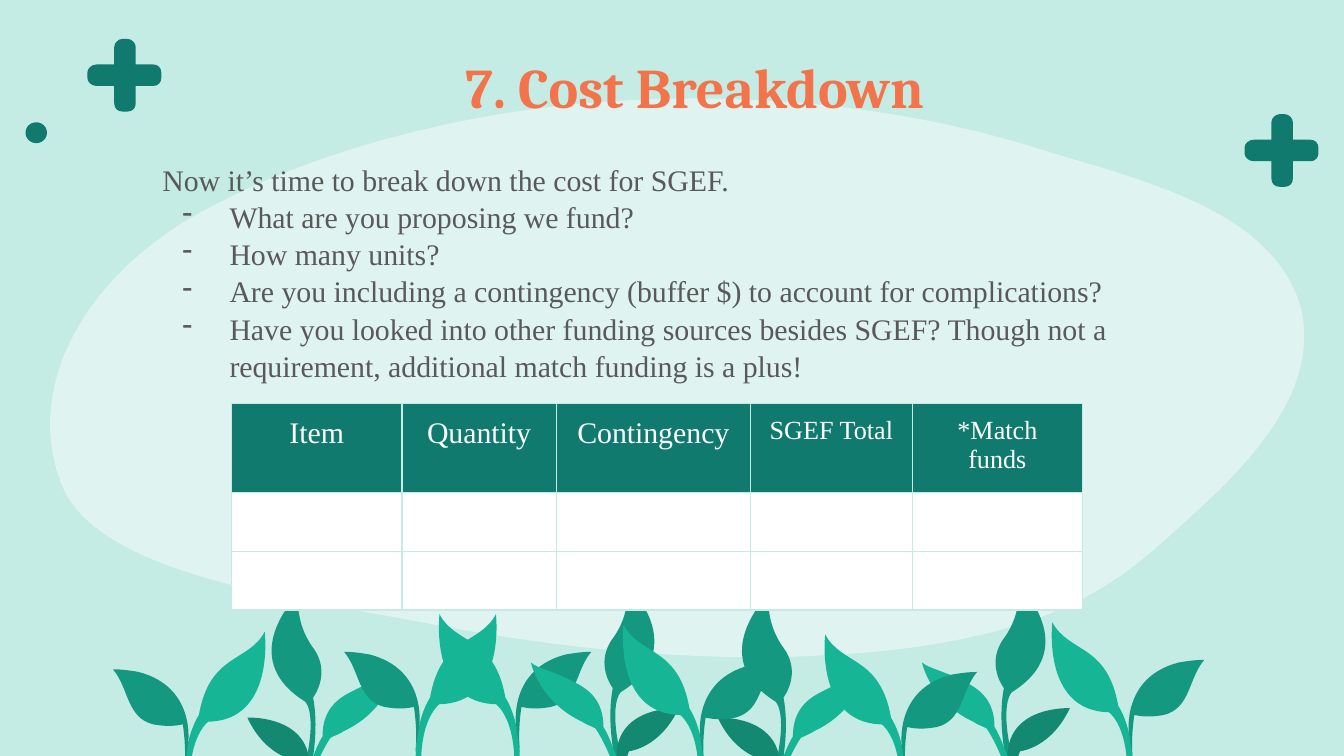
from pptx import Presentation
from pptx.util import Pt
from pptx.dml.color import RGBColor
from pptx.enum.shapes import MSO_SHAPE
from pptx.enum.text import PP_ALIGN
from pptx.oxml.ns import qn
from lxml import etree

OVAL = MSO_SHAPE.OVAL
LEFT, CENTER = PP_ALIGN.LEFT, PP_ALIGN.CENTER

HEX = {
    "mint": "C4ECE4", "teal": "107A6F", "white": "FFFFFF", "coral": "F3734A",
    "gray": "595959", "leaf": "149980", "light": "16B596", "dark": "138972",
}
SERIF = "Times New Roman"
TITLE = "7. Cost Breakdown"
INTRO = "Now it’s time to break down the cost for SGEF."
ASKS = [
    "What are you proposing we fund?",
    "How many units?",
    "Are you including a contingency (buffer $) to account for complications?",
    "Have you looked into other funding sources besides SGEF? "
    "Though not a requirement, additional match funding is a plus!",
]
HEADS = [("Item", 16, 91.4), ("Quantity", 16, 82.6), ("Contingency", 16, 104.2),
         ("SGEF Total", 14, 86.6), ("*Match funds", 14, 91.2)]
ROWS = [45.5, 31.4, 31.4]

GRID = 0.72
CROSS = [
    (95, 83), (98, 83, 101, 81, 101, 77), (101, 64), (114, 64),
    (118, 64, 120, 61, 120, 58), (120, 54), (120, 51, 118, 48, 114, 48),
    (101, 48), (101, 35), (101, 32, 98, 29, 95, 29), (91, 29),
    (88, 29, 85, 32, 85, 35), (85, 48), (72, 48), (68, 48, 65, 51, 65, 54),
    (65, 58), (65, 61, 68, 64, 72, 64), (85, 64), (85, 77),
    (85, 81, 88, 83, 91, 83),
]
BLOB = [
    (727, 473), (764, 465, 798, 452, 827, 433), (850, 418, 870, 399, 892, 379),
    (941, 334, 981, 284, 968, 229), (946, 154, 847, 134, 764, 108),
    (635, 69, 469, 60, 317, 96), (261, 109, 206, 128, 157, 154),
    (65, 201, 15, 288, 47, 363), (77, 432, 241, 448, 324, 465),
    (404, 480, 490, 490, 576, 489), (622, 488, 676, 485, 727, 473),
]
TALL = [
    ("leaf", [(222, 442), (222, 442, 174, 489, 227, 522),
              (227, 522, 237, 530, 226, 574), (231, 574),
              (231, 574, 238, 545, 233, 519), (233, 519, 247, 501, 233, 482),
              (219, 463, 222, 442, 222, 442)]),
    ("light", [(263, 514), (250, 520, 240, 529, 240, 548),
               (234, 557, 226, 583, 226, 583), (227, 594),
               (235, 564, 246, 549, 246, 549), (250, 547, 253, 546, 256, 544),
               (288, 529, 294, 500, 294, 500), (293, 501, 291, 502, 289, 503),
               (282, 506, 272, 509, 263, 514)]),
    ("dark", [(184, 534), (198, 564, 221, 566, 221, 566),
              (232, 593, 213, 629, 213, 629), (215, 632),
              (231, 601, 230, 565, 230, 565), (226, 532, 184, 534, 184, 534)]),
]
PAIR = [
    ("light", [(197, 470), (185, 493, 156, 486, 148, 532),
               (130, 561, 140, 611, 140, 611), (144, 611),
               (134, 551, 155, 537, 155, 537), (205, 536, 197, 470, 197, 470)]),
    ("leaf", [(103, 500), (97, 499, 91, 498, 84, 498),
              (96, 512, 94, 534, 114, 539), (120, 540, 127, 541, 136, 539),
              (136, 539, 139, 557, 137, 573), (140, 553),
              (140, 553, 146, 511, 103, 500)]),
]
PLANTS = [
    (TALL, 1, 0, 0), (PAIR, 1, 0, 0), (TALL, -1, 980, -7), (PAIR, -1, 980, -7),
    (PAIR, 1, 172, -13), (PAIR, -1, 524, -13), (PAIR, -1, 811, 2),
    (TALL, -1, 689, -7), (TALL, 1, 350, 0), (PAIR, -1, 661, -5),
]


def color(name):
    return RGBColor.from_string(HEX[name])


def paint(shape, name):
    shape.shadow.inherit = False
    shape.fill.solid()
    shape.fill.fore_color.rgb = color(name)
    shape.line.fill.background()


def bend(shape, segs):
    lines = iter(shape._element.findall(".//" + qn("a:lnTo")))
    for seg in segs:
        group = [next(lines) for _ in range(len(seg) // 2)]
        if len(group) == 3:
            curve = etree.Element(qn("a:cubicBezTo"))
            group[0].addprevious(curve)
            for line in group:
                curve.append(line[0])
                line.getparent().remove(line)


def draw(segs, name, flip=1, dx=0, dy=0):
    dots = [(Pt((flip * seg[i] + dx) * GRID), Pt((seg[i + 1] + dy) * GRID))
            for seg in segs for i in range(0, len(seg), 2)]
    pen = slide.shapes.build_freeform(*dots[0], scale=1.0)
    pen.add_line_segments(dots[1:], close=True)
    shape = pen.convert_to_shape()
    bend(shape, segs[1:])
    paint(shape, name)
    return shape


def write(para, text, size, name, font=SERIF, bold=False, align=LEFT):
    para.alignment = align
    run = para.add_run()
    run.text = text
    run.font.size, run.font.name, run.font.bold = Pt(size), font, bold
    run.font.color.rgb = color(name)


def inset(area):
    area.margin_left = area.margin_right = Pt(7.2)
    area.margin_top = area.margin_bottom = Pt(7.2)


def add_box(x, y, w, h):
    frame = slide.shapes.add_textbox(Pt(x), Pt(y), Pt(w), Pt(h)).text_frame
    frame.word_wrap = True
    inset(frame)
    return frame


def dash(para):
    props = para._p.get_or_add_pPr()
    props.set("marL", str(Pt(36)))
    props.set("indent", str(-Pt(25.2)))
    tint = etree.SubElement(props, qn("a:buClr"))
    etree.SubElement(tint, qn("a:srgbClr"), val=HEX["gray"])
    etree.SubElement(props, qn("a:buChar"), char="-")


def edge(cell):
    props = cell._tc.get_or_add_tcPr()
    for side in ("lnL", "lnR", "lnT", "lnB"):
        line = etree.SubElement(props, qn("a:" + side), w=str(Pt(0.75)))
        fill = etree.SubElement(line, qn("a:solidFill"))
        etree.SubElement(fill, qn("a:srgbClr"), val=HEX["mint"])


deck = Presentation()
deck.slide_width, deck.slide_height = Pt(720), Pt(405)
slide = deck.slides.add_slide(deck.slide_layouts[6])
slide.background.fill.solid()
slide.background.fill.fore_color.rgb = color("mint")

draw(CROSS, "teal")
draw(CROSS, "teal", dx=861, dy=56)
dot = slide.shapes.add_shape(OVAL, Pt(13.7), Pt(65.5), Pt(11.5), Pt(11.2))
paint(dot, "teal")
blob = draw(BLOB, "white")
tint = blob._element.spPr.find(qn("a:solidFill"))[0]
etree.SubElement(tint, qn("a:alpha"), val="46000")

for plant, flip, dx, dy in PLANTS:
    for name, segs in plant:
        draw(segs, name, flip, dx, dy)

head = add_box(68.4, 20.9, 607.7, 37.4)
write(head.paragraphs[0], TITLE, 30, "coral", "Cambria", True, CENTER)

wide = sum(w for _, _, w in HEADS)
table = slide.shapes.add_table(
    len(ROWS), len(HEADS), Pt(124), Pt(216), Pt(wide), Pt(sum(ROWS))).table
for r, high in enumerate(ROWS):
    table.rows[r].height = Pt(high)
    for c, (text, size, w) in enumerate(HEADS):
        table.columns[c].width = Pt(w)
        cell = table.cell(r, c)
        edge(cell)
        cell.fill.solid()
        cell.fill.fore_color.rgb = color("white" if r else "teal")
        if r == 0:
            inset(cell)
            write(cell.text_frame.paragraphs[0], text, size, "white", align=CENTER)

body = add_box(79.9, 78.5, 571, 108.7)
for i, text in enumerate([INTRO] + ASKS):
    para = body.add_paragraph() if i else body.paragraphs[0]
    para.line_spacing = 1.04
    write(para, text, 16, "gray")
    if i:
        dash(para)

deck.save("out.pptx")
